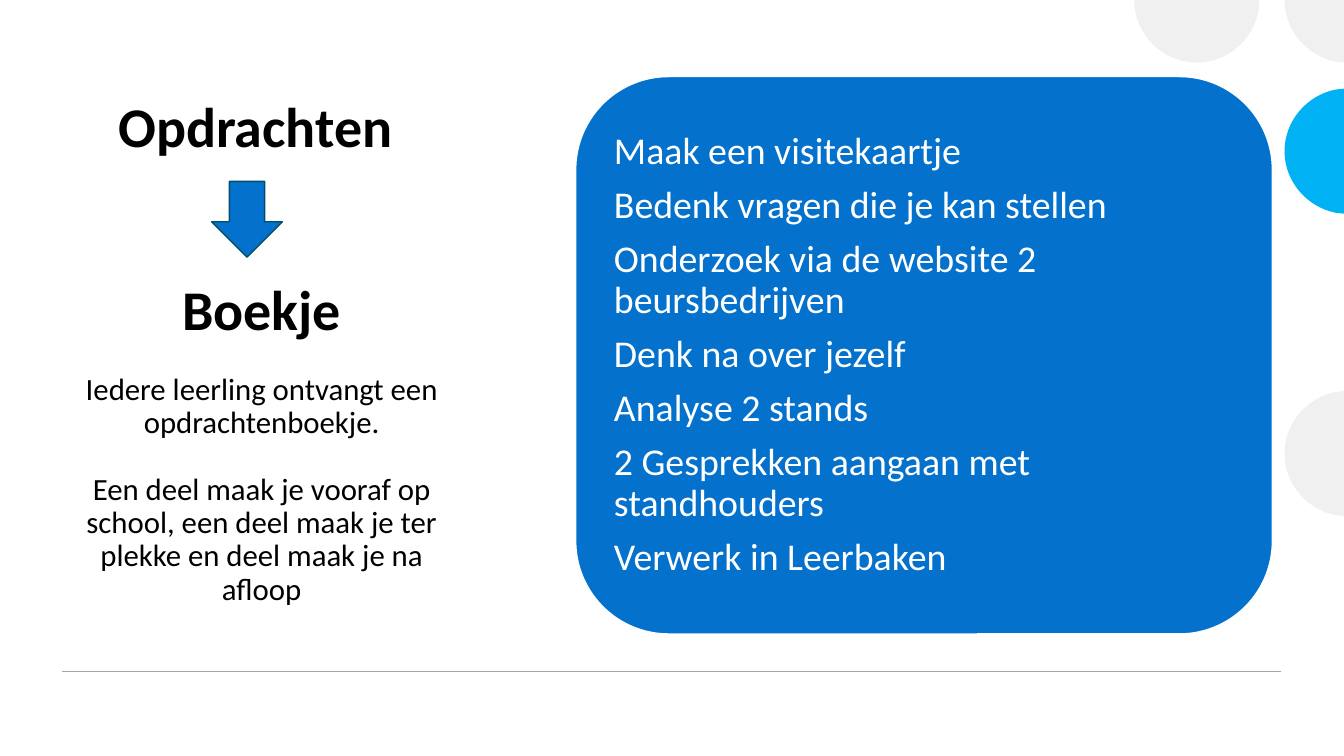
from lxml.etree import SubElement
from pptx import Presentation
from pptx.dml.color import RGBColor
from pptx.enum.shapes import MSO_CONNECTOR, MSO_SHAPE
from pptx.enum.text import MSO_ANCHOR, PP_ALIGN
from pptx.oxml.ns import qn
from pptx.util import Inches, Pt

BLUE = RGBColor(0x04, 0x71, 0xCC)
SKY = RGBColor(0x00, 0xB2, 0xF3)
PALE = RGBColor(0xEF, 0xF0, 0xEF)
GREY = RGBColor(0xA6, 0xA6, 0xA6)
NAVY = RGBColor(0x00, 0x4E, 0x6B)
WHITE = RGBColor(0xFF, 0xFF, 0xFF)
BLACK = RGBColor(0, 0, 0)

WIDE, HIGH = 13.33, 7.5
PITCH = HIGH / 5

INTRO = [
    ("Opdrachten ", 40, True, 0),
    ("Boekje", 40, True, 87),
    ("Iedere leerling ontvangt een opdrachtenboekje.", 22, False, 22.7),
    ("Een deel maak je vooraf op school, een deel maak je ter plekke "
     "en deel maak je na afloop", 22, False, 23.7),
]
TASKS = [
    "Maak een visitekaartje",
    "Bedenk vragen die je kan stellen",
    "Onderzoek via de website 2 beursbedrijven",
    "Denk na over jezelf",
    "Analyse 2 stands",
    "2 Gesprekken aangaan met standhouders",
    "Verwerk in Leerbaken",
]
BOWL = [(11.25, 0), (12.49, 0),
        (12.49, 0.34), (12.21, 0.62), (11.87, 0.62),
        (11.53, 0.62), (11.25, 0.34), (11.25, 0)]
LOWER = [(WIDE, 0.62), (13.24, 0.61),
         (12.96, 0.55), (12.74, 0.3), (12.74, 0)]
UPPER = [(12.74, -0.3), (12.96, -0.55), (13.24, -0.61)]
SIDE = [(WIDE, -0.62)] + LOWER + UPPER
CORNER = [(12.74, 0), (WIDE, 0)] + LOWER
DOTS = [(BOWL, 1, 0, PALE), (SIDE, 2, 3, PALE),
        (SIDE, 2, 1, SKY), (CORNER, 3, 0, PALE)]
PANEL = (5.71, 0.76, 6.91, 5.53)
INSET = 0.27


def add_dot(slide, outline, lines, row, color):
    points = [(Inches(x), Inches(y + row * PITCH)) for x, y in outline]
    pen = slide.shapes.build_freeform(*points[0])
    pen.add_line_segments(points[1:], close=True)
    dot = pen.convert_to_shape()
    dot.shadow.inherit = False
    dot.fill.solid()
    dot.fill.fore_color.rgb = color
    dot.line.fill.background()
    steps = list(dot.element.iter(qn("a:lnTo")))[lines:len(points) - 1]
    for first in range(0, len(steps), 3):
        curve = steps[first]
        curve.tag = qn("a:cubicBezTo")
        for step in steps[first + 1:first + 3]:
            curve.append(step[0])
            step.getparent().remove(step)


def add_form(slide, kind, box, edge):
    form = slide.shapes.add_shape(kind, *map(Inches, box))
    form.shadow.inherit = False
    form.fill.solid()
    form.fill.fore_color.rgb = BLUE
    form.line.color.rgb = edge
    form.line.width = Pt(1)


def add_box(slide, box, anchor, pads):
    frame = slide.shapes.add_textbox(*map(Inches, box)).text_frame
    frame.word_wrap = True
    frame.vertical_anchor = anchor
    (frame.margin_left, frame.margin_top,
     frame.margin_right, frame.margin_bottom) = map(Inches, pads)
    return frame


def add_text(frame, index, text, size, bold, color, align, before, after):
    para = frame.add_paragraph() if index else frame.paragraphs[0]
    para.alignment = align
    para.line_spacing = 0.9
    para.space_before, para.space_after = Pt(before), Pt(after)
    run = para.add_run()
    run.text = text
    run.font.name = "Calibri"
    run.font.size = Pt(size)
    run.font.bold = bold
    run.font.color.rgb = color


def main():
    deck = Presentation()
    deck.slide_width, deck.slide_height = Inches(WIDE), Inches(HIGH)
    slide = deck.slides.add_slide(deck.slide_layouts[6])

    intro = add_box(slide, (0.62, 0.62, 3.95, 5.82), MSO_ANCHOR.BOTTOM,
                    (0.1, 0.05, 0.1, 0.42))
    for index, (text, size, bold, gap) in enumerate(INTRO):
        add_text(intro, index, text, size, bold, BLACK,
                 PP_ALIGN.CENTER, gap, 0)

    for dot in DOTS:
        add_dot(slide, *dot)

    rule = slide.shapes.add_connector(
        MSO_CONNECTOR.STRAIGHT, *map(Inches, (0.62, 6.66, 12.71, 6.66)))
    rule.line.color.rgb = GREY
    rule.line.width = Pt(1)
    SubElement(rule.element.spPr, qn("a:effectLst"))

    add_form(slide, MSO_SHAPE.ROUNDED_RECTANGLE, PANEL, WHITE)
    left, top, width, height = PANEL
    inner = (left + INSET, top + INSET, width - 2 * INSET, height - 2 * INSET)
    tasks = add_box(slide, inner, MSO_ANCHOR.MIDDLE, (0.11,) * 4)
    for index, text in enumerate(TASKS):
        add_text(tasks, index, text, 27, False, WHITE, PP_ALIGN.LEFT, 0, 9.45)

    add_form(slide, MSO_SHAPE.DOWN_ARROW, (2.1, 1.8, 0.7, 0.75), NAVY)
    deck.save("out.pptx")


if __name__ == "__main__":
    main()
